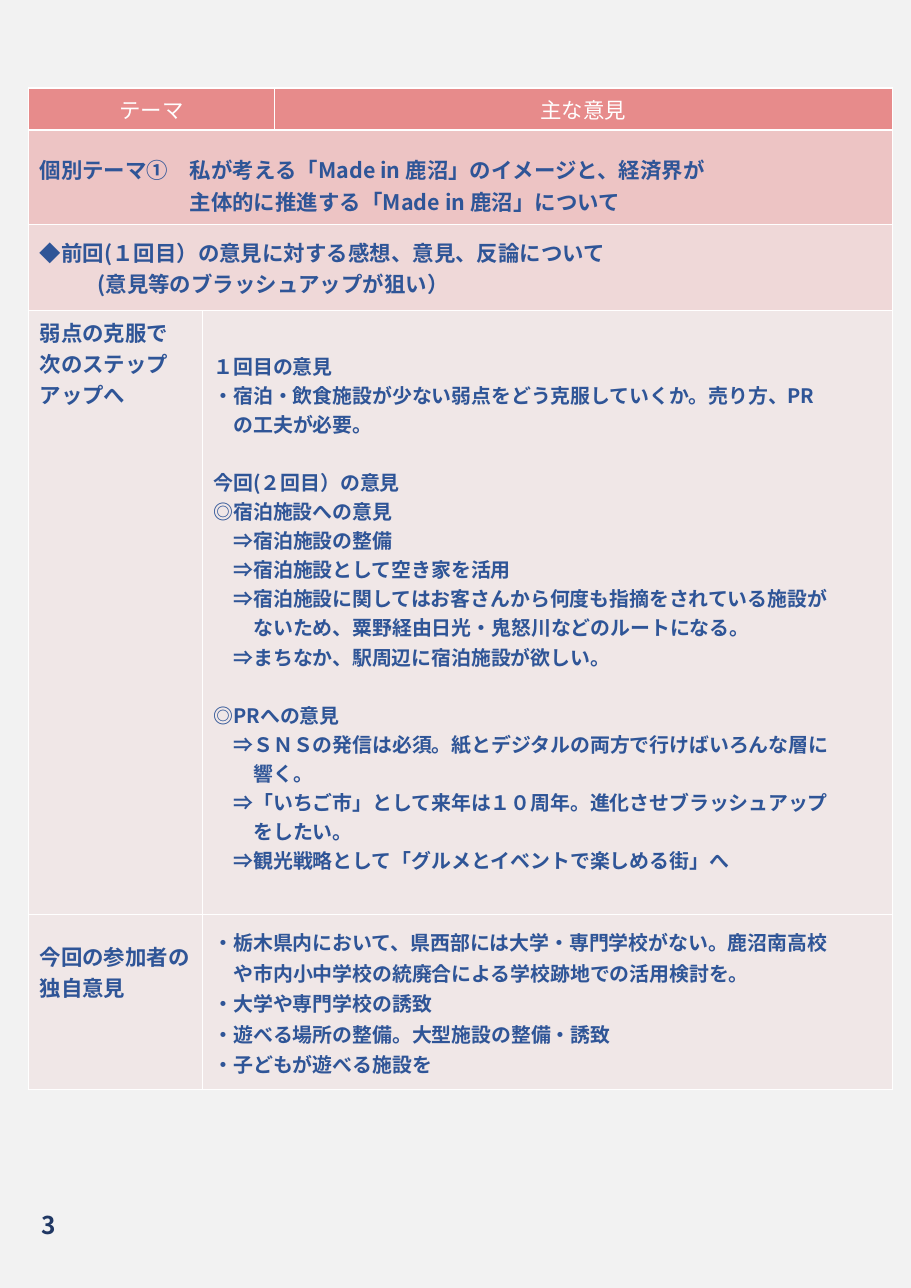
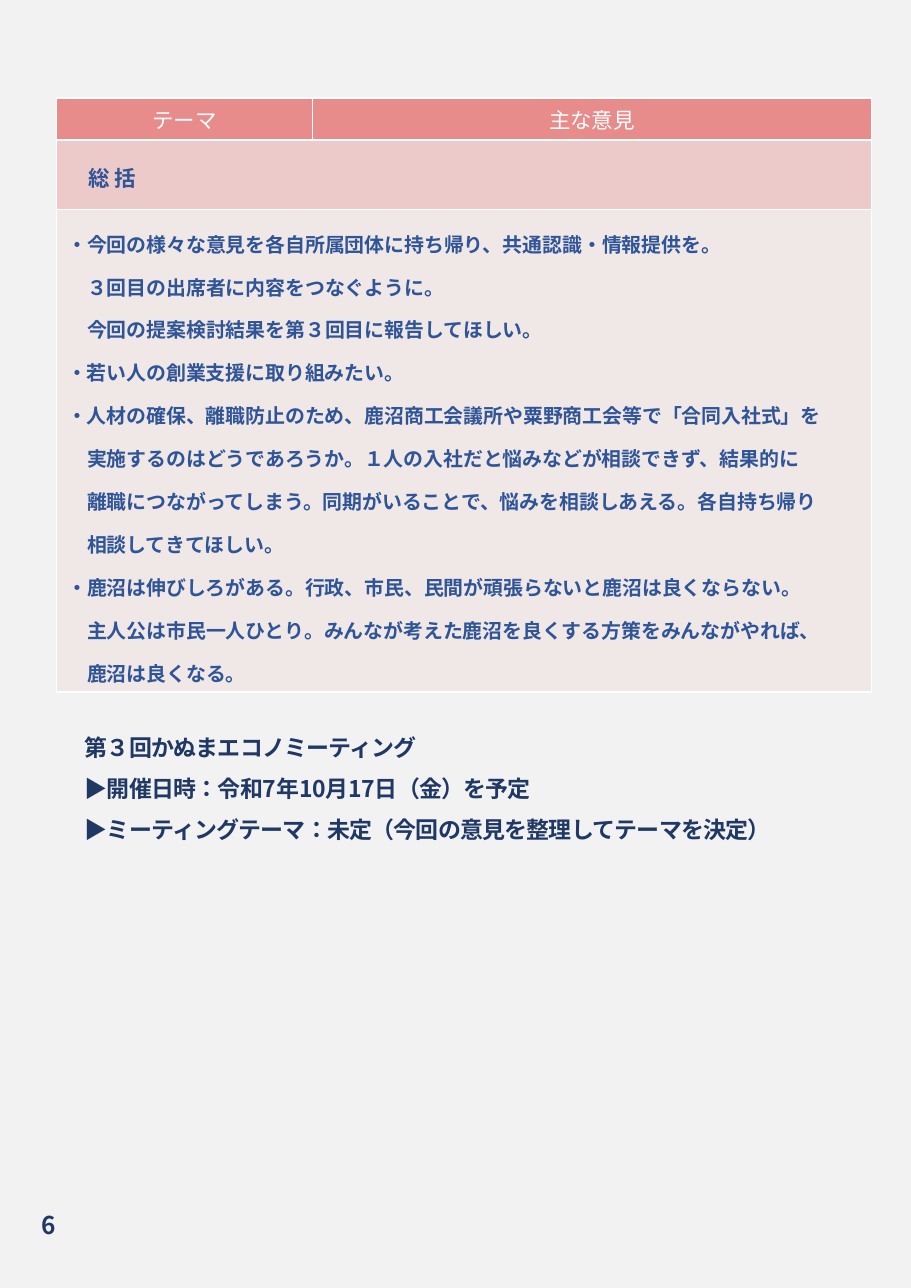
from dataclasses import dataclass

from pptx import Presentation, util as u
from pptx.dml.color import RGBColor
from pptx.enum import text as t
from pptx.enum.lang import MSO_LANGUAGE_ID
from pptx.oxml import parse_xml
from pptx.oxml.ns import nsdecls, qn

# Shared look
PX = 9144  # EMU per px, 100 px to the inch
FONT = "Noto Sans CJK JP"
PAPER, NAVY, BLUE, ROSE, WHITE = "F2F2F2", "203864", "2F5597", "E78B8B", "FFFFFF"
TOP, MIDDLE = t.MSO_ANCHOR.TOP, t.MSO_ANCHOR.MIDDLE


@dataclass
class Line:
    text: str
    indent: float = 0  # in characters
    before: float = 0  # points
    spacing: float | None = None  # overrides the style


@dataclass
class Style:
    size: float
    color: str = BLUE
    bold: bool = True
    spacing: float | u.Length = 1.0
    tracking: float = 0
    align: t.PP_ALIGN = t.PP_ALIGN.LEFT


@dataclass
class Cell:
    lines: list[Line]
    style: Style
    span: int = 1
    anchor: t.MSO_ANCHOR = MIDDLE
    bottom: int = 5


@dataclass
class Row:
    height: int
    opacity: int  # percent
    cells: list[Cell]


def px(value: int) -> u.Emu:
    return u.Emu(value * PX)


def rgb(value: str) -> RGBColor:
    return RGBColor.from_string(value)


def write(frame, lines: list[Line], style: Style) -> None:
    frame.text = "\n".join(line.text for line in lines)
    for paragraph, line in zip(frame.paragraphs, lines):
        paragraph.alignment = style.align
        paragraph.line_spacing = line.spacing or style.spacing
        paragraph.space_before = u.Pt(line.before)
        props = paragraph._p.get_or_add_pPr()
        props.set("marL", str(int(u.Pt(line.indent * style.size))))
        props.set("indent", "0")
        props.append(parse_xml(f"<a:buNone {nsdecls('a')}/>"))
        for run in paragraph.runs:
            font = run.font
            font.size, font.bold, font.name = u.Pt(style.size), style.bold, FONT
            font.color.rgb = rgb(style.color)
            font.language_id = MSO_LANGUAGE_ID.JAPANESE
            run_props = run._r.get_or_add_rPr()
            run_props.append(parse_xml(f'<a:ea {nsdecls("a")} typeface="{FONT}"/>'))
            if style.tracking:
                run_props.set("spc", str(int(style.tracking * 100)))


def paint_cell(cell, opacity: int) -> None:
    props = cell._tc.get_or_add_tcPr()
    for side in "LRTB":
        props.append(parse_xml(
            f'<a:ln{side} {nsdecls("a")} w="12700"><a:solidFill>'
            f'<a:srgbClr val="{WHITE}"/></a:solidFill></a:ln{side}>'))
    cell.fill.solid()
    cell.fill.fore_color.rgb = rgb(ROSE)
    if opacity < 100:
        color = props.find(qn("a:solidFill")).find(qn("a:srgbClr"))
        color.append(parse_xml(f'<a:alpha {nsdecls("a")} val="{opacity * 1000}"/>'))


def add_opinions(slide, left: int, top: int, widths: list[int], rows: list[Row]) -> None:
    height = sum(row.height for row in rows)
    table = slide.shapes.add_table(len(rows), len(widths), px(left), px(top),
                                   px(sum(widths)), px(height)).table
    table.first_row = table.horz_banding = False
    for column, width in zip(table.columns, widths):
        column.width = px(width)
    for r, row in enumerate(rows):
        table.rows[r].height = px(row.height)
        for c in range(len(widths)):
            paint_cell(table.cell(r, c), row.opacity)
        start = 0
        for entry in row.cells:
            cell = table.cell(r, start)
            if entry.span > 1:
                cell.merge(table.cell(r, start + entry.span - 1))
            cell.vertical_anchor = entry.anchor
            cell.margin_bottom = px(entry.bottom)
            write(cell.text_frame, entry.lines, entry.style)
            start += entry.span


def add_page_number(slide, number: int) -> None:
    frame = slide.shapes.add_textbox(px(28), px(1081), px(87), px(62)).text_frame
    frame.word_wrap = True
    frame.vertical_anchor = MIDDLE
    write(frame, [Line(str(number))], Style(16, NAVY))


# Text styles
HEADER = Style(14, WHITE, False, align=t.PP_ALIGN.CENTER)
THEME = Style(14)
REVIEW = Style(13, spacing=u.Pt(19))
NEW_IDEAS = Style(13, spacing=u.Pt(20))
SUMMARY = Style(13, spacing=1.5)
NEXT_MEETING = Style(15, NAVY, spacing=u.Pt(26.8), tracking=-0.5)


def header_row(theme_span: int) -> Row:
    return Row(38, 100, [Cell([Line("テーマ")], HEADER, theme_span),
                         Cell([Line("主な意見")], HEADER)])


# Content of the opinions page
THEME_LINES = [
    Line("個別テーマ①　私が考える「Made in 鹿沼」のイメージと、経済界が", spacing=1.5),
    Line("主体的に推進する「Made in 鹿沼」について", 7),
]
FEEDBACK_LINES = [
    Line("◆前回(１回目）の意見に対する感想、意見、反論について"),
    Line("(意見等のブラッシュアップが狙い）", 2.7),
]
WEAKNESS_LINES = [Line("弱点の克服で"), Line("次のステップアップへ")]
REVIEW_LINES = [
    Line("１回目の意見"),
    Line("・宿泊・飲食施設が少ない弱点をどう克服していくか。売り方、PR"),
    Line("の工夫が必要。", 1),
    Line("今回(２回目）の意見", before=19),
    Line("◎宿泊施設への意見"),
    Line("⇒宿泊施設の整備", 1),
    Line("⇒宿泊施設として空き家を活用", 1),
    Line("⇒宿泊施設に関してはお客さんから何度も指摘をされている施設が", 1),
    Line("ないため、粟野経由日光・鬼怒川などのルートになる。", 2),
    Line("⇒まちなか、駅周辺に宿泊施設が欲しい。", 1),
    Line("◎PRへの意見", before=19),
    Line("⇒ＳＮＳの発信は必須。紙とデジタルの両方で行けばいろんな層に", 1),
    Line("響く。", 2),
    Line("⇒「いちご市」として来年は１０周年。進化させブラッシュアップ", 1),
    Line("をしたい。", 2),
    Line("⇒観光戦略として「グルメとイベントで楽しめる街」へ", 1),
]
PARTICIPANT_LINES = [Line("今回の参加者の"), Line("独自意見")]
NEW_IDEA_LINES = [
    Line("・栃木県内において、県西部には大学・専門学校がない。鹿沼南高校"),
    Line("や市内小中学校の統廃合による学校跡地での活用検討を。", 1),
    Line("・大学や専門学校の誘致"),
    Line("・遊べる場所の整備。大型施設の整備・誘致"),
    Line("・子どもが遊べる施設を"),
]

# Content of the summary page
SUMMARY_LINES = [
    Line("・今回の様々な意見を各自所属団体に持ち帰り、共通認識・情報提供を。"),
    Line("３回目の出席者に内容をつなぐように。", 1),
    Line("今回の提案検討結果を第３回目に報告してほしい。", 1),
    Line("・若い人の創業支援に取り組みたい。"),
    Line("・人材の確保、離職防止のため、鹿沼商工会議所や粟野商工会等で「合同入社式」を"),
    Line("実施するのはどうであろうか。１人の入社だと悩みなどが相談できず、結果的に", 1),
    Line("離職につながってしまう。同期がいることで、悩みを相談しあえる。各自持ち帰り", 1),
    Line("相談してきてほしい。", 1),
    Line("・鹿沼は伸びしろがある。行政、市民、民間が頑張らないと鹿沼は良くならない。"),
    Line("主人公は市民一人ひとり。みんなが考えた鹿沼を良くする方策をみんながやれば、", 1),
    Line("鹿沼は良くなる。", 1),
]
NEXT_LINES = [
    Line("第３回かぬまエコノミーティング"),
    Line("▶開催日時：令和7年10月17日（金）を予定"),
    Line("▶ミーティングテーマ：未定（今回の意見を整理してテーマを決定）"),
]


def build_opinions(prs) -> None:
    slide = prs.slides.add_slide(prs.slide_layouts[6])
    add_page_number(slide, 3)
    add_opinions(slide, 26, 80, [158, 65, 561], [
        header_row(2),
        Row(86, 44, [Cell(THEME_LINES, THEME, 3)]),
        Row(78, 25, [Cell(FEEDBACK_LINES, THEME, 3)]),
        Row(548, 10, [Cell(WEAKNESS_LINES, THEME, anchor=TOP),
                      Cell(REVIEW_LINES, REVIEW, 2)]),
        Row(159, 10, [Cell(PARTICIPANT_LINES, THEME, bottom=60),
                      Cell(NEW_IDEA_LINES, NEW_IDEAS, 2)]),
    ])


def build_summary(prs) -> None:
    slide = prs.slides.add_slide(prs.slide_layouts[1])
    title = slide.shapes.title
    title._element.getparent().remove(title._element)

    # Next meeting
    meeting = slide.placeholders[1]
    meeting.left, meeting.top, meeting.width, meeting.height = map(px, (67, 649, 740, 130))
    meeting.text_frame.auto_size = t.MSO_AUTO_SIZE.NONE
    meeting.text_frame.vertical_anchor = TOP
    write(meeting.text_frame, NEXT_LINES, NEXT_MEETING)

    add_page_number(slide, 6)
    add_opinions(slide, 51, 89, [233, 507], [
        header_row(1),
        Row(63, 39, [Cell([Line("総 括", 1, spacing=1.5)], THEME, 2, TOP)]),
        Row(438, 10, [Cell(SUMMARY_LINES, SUMMARY, 2, TOP)]),
    ])


def main() -> None:
    prs = Presentation()
    prs.slide_width, prs.slide_height = px(827), px(1169)
    background = prs.slide_master.background.fill
    background.solid()
    background.fore_color.rgb = rgb(PAPER)
    build_opinions(prs)
    build_summary(prs)
    prs.save("out.pptx")


if __name__ == "__main__":
    main()
